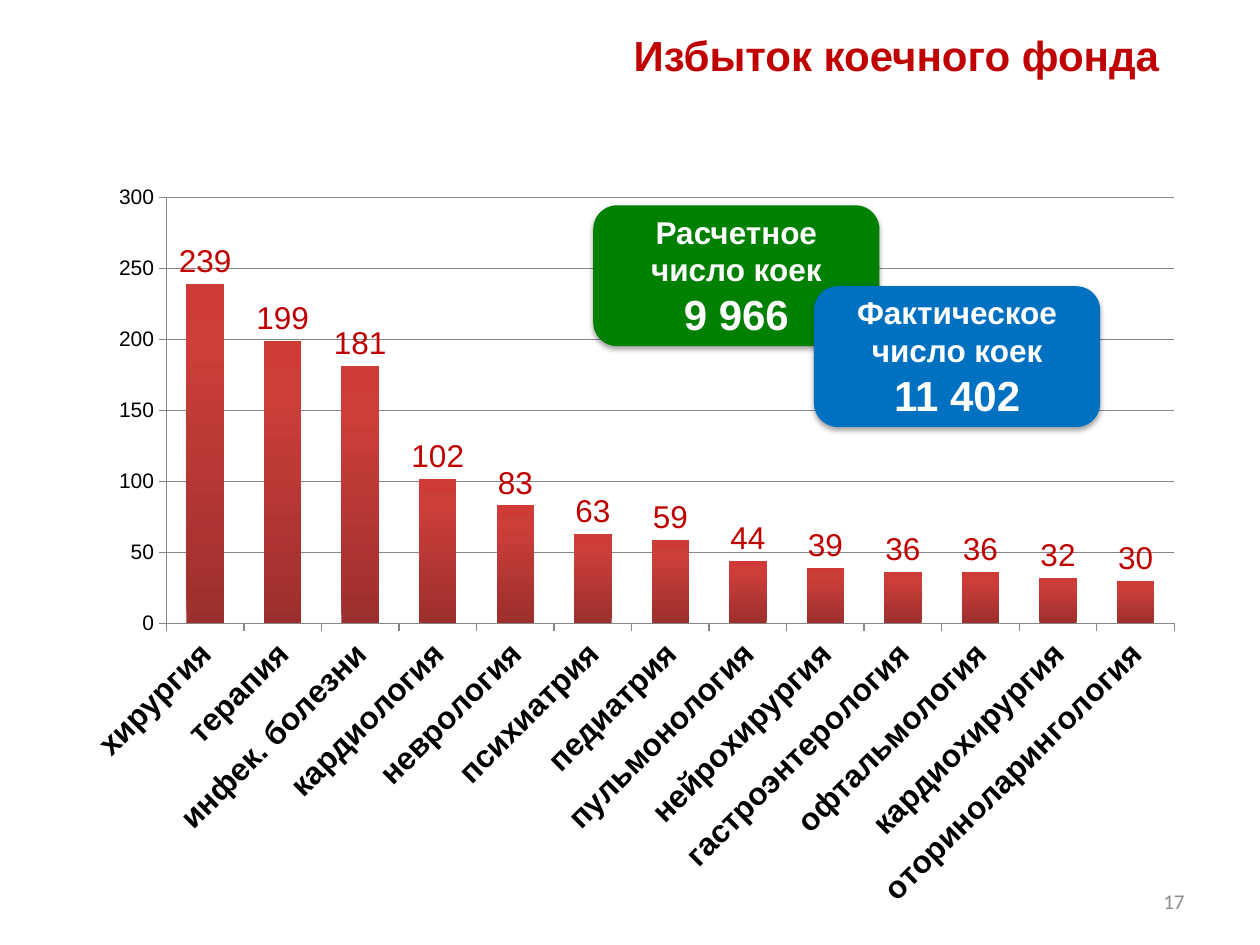
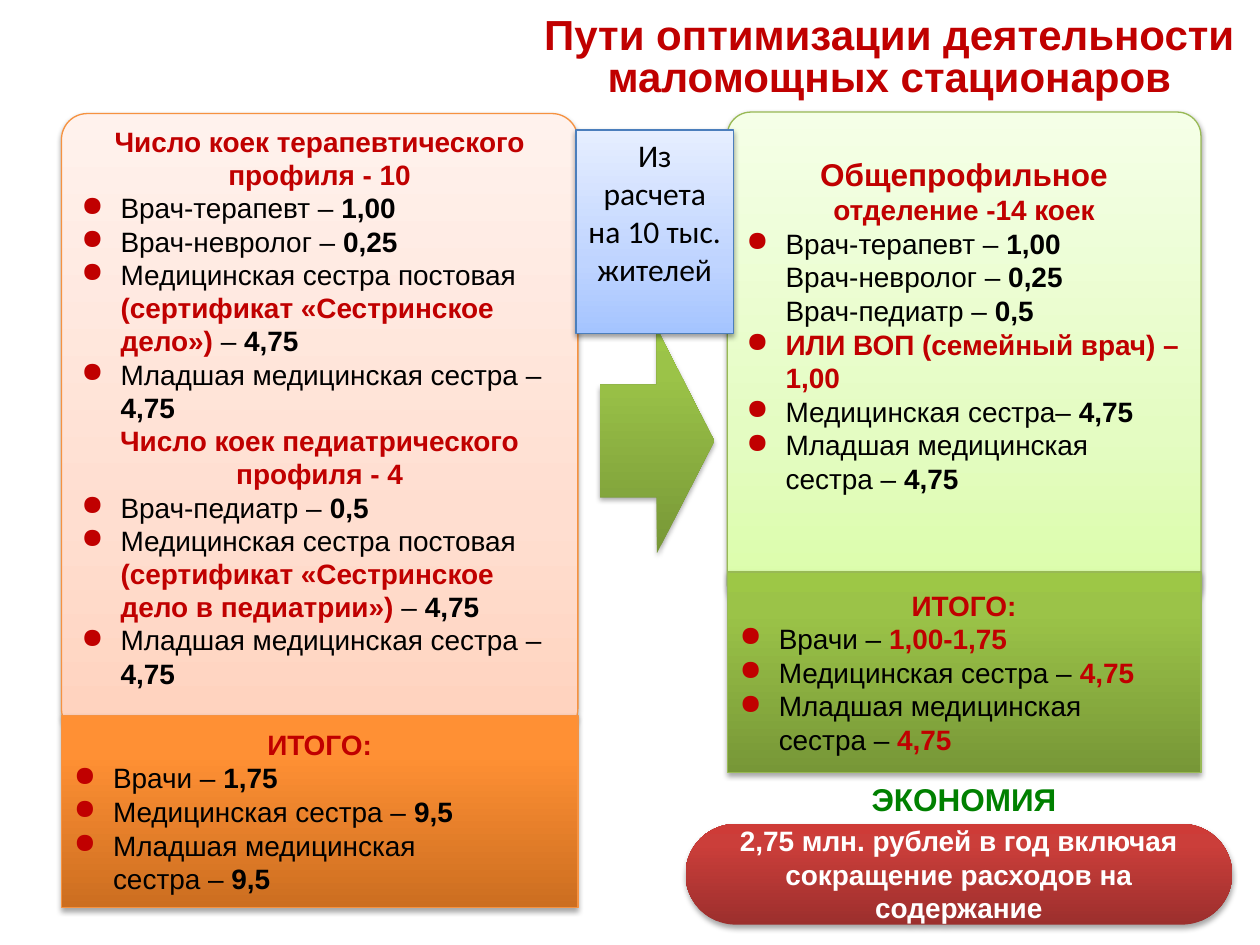
from lxml.etree import SubElement as Sub
from pptx import Presentation
from pptx.chart.data import CategoryChartData as Data
from pptx.dml.color import RGBColor as RGB
from pptx.enum.chart import XL_CHART_TYPE as Kind, XL_LABEL_POSITION as Spot, XL_TICK_MARK as Tick
from pptx.enum.shapes import MSO_SHAPE as Form
from pptx.enum.text import MSO_ANCHOR as Anchor, PP_ALIGN as Align
from pptx.oxml import parse_xml
from pptx.oxml.ns import nsdecls, qn
from pptx.util import Cm, Pt

RED, GREEN, BLUE, GREY = "C00000", "008000", "0070C0", "868686"
BRICK = ("9C2F2D", "CB3E3A", "CE3B37", 80)
LEAF = ("779737", "9BC348", "9DC746", 80)
AMBER = ("CC6E20", "FF9034", "FF9136", 80)
PEACH = ("FFD2BD", "FFDED0", "FFF2ED", 35)
LIME = ("DAFDA7", "E4FCC2", "F5FFE7", 35)
SKY = ("A4C4FF", "BFD4FF", "E6EEFF", 35)

# style: size, colour, bold, face
STYLES = {
    "title": (24, RED, True, "Arial"),
    "head": (18, RED, True, "Arial"),
    "red": (16, RED, True, "Arial"),
    "text": (16, "000000", False, "Arial"),
    "bold": (16, "000000", True, "Arial"),
    "white": (16, "FFFFFF", True, "Arial"),
    "label": (18, "FFFFFF", True, "Arial"),
    "total": (24, "FFFFFF", True, "Arial"),
    "green": (18, GREEN, True, "Arial"),
    "note": (18, "000000", False, "Calibri"),
    "page": (12, "8C8C8C", False, "Calibri"),
}


def paint(fill, tone, node=None):
    """Fill with one hex colour, or with three and the middle stop's percent."""
    if isinstance(tone, str):
        fill.solid()
        fill.fore_color.rgb = RGB.from_string(tone)
        return
    fill.gradient()
    fill.gradient_angle = 90
    stops = node.find(".//" + qn("a:gsLst"))
    for stop in list(stops):
        stops.remove(stop)
    for shade, pos in zip(tone, (0, tone[3], 100)):
        stop = Sub(stops, qn("a:gs"), pos=str(pos * 1000))
        Sub(stop, qn("a:srgbClr"), val=shade)


def write(frame, paras, pitch=None):
    """Write (kind, run, ...) paragraphs; kind is mid, right, dot or tab."""
    frame.word_wrap = True
    for i, (kind, *runs) in enumerate(paras):
        para = frame.add_paragraph() if i else frame.paragraphs[0]
        para.alignment = {"mid": Align.CENTER, "right": Align.RIGHT}.get(kind, Align.LEFT)
        if pitch:
            para.line_spacing = Pt(pitch)
        props = para._p.get_or_add_pPr()
        if kind in ("dot", "tab"):
            props.set("marL", str(Cm(0.79)))
        if kind == "dot":
            props.set("indent", str(-Cm(0.79)))
            Sub(Sub(props, qn("a:buClr")), qn("a:srgbClr"), val=RED)
            Sub(props, qn("a:buChar"), char="●")
        for style, text in runs:
            size, tone, bold, face = STYLES[style]
            for j, part in enumerate(text.split("\n")):
                if j:
                    para.add_line_break()
                    Sub(para._p[-1], qn("a:rPr"), sz=str(size * 100))
                if part:
                    run = para.add_run()
                    run.text = part
                    font = run.font
                    font.size, font.bold, font.name = Pt(size), bold, face
                    paint(font.fill, tone)


deck = Presentation()
deck.slide_width, deck.slide_height = Cm(25.4), Cm(19.05)

# Titles
slides = []
for text, left in (
    ("Избыток коечного фонда", 10.74),
    ("Пути оптимизации деятельности маломощных стационаров", 10.46),
):
    slide = deck.slides.add_slide(deck.slide_layouts[5])
    title = slide.shapes.title
    title.left, title.top = Cm(left), Cm(0)
    title.width, title.height = Cm(25.4 - left), Cm(2.39)
    write(title.text_frame, [("mid", ("title", text))], 24)
    slides.append(slide)
excess, ways = slides

# Chart of surplus beds
beds = {
    "хирургия": 239, "терапия": 199, "инфек. болезни": 181, "кардиология": 102,
    "неврология": 83, "психиатрия": 63, "педиатрия": 59, "пульмонология": 44,
    "нейрохирургия": 39, "гастроэнтерология": 36, "офтальмология": 36,
    "кардиохирургия": 32, "оториноларингология": 30,
}
data = Data()
data.categories = list(beds)
data.add_series("Series 1", list(beds.values()))
chart = excess.shapes.add_chart(
    Kind.COLUMN_CLUSTERED, Cm(1.3), Cm(3.53), Cm(22.83), Cm(15.06), data).chart
chart.has_legend = chart.has_title = False
chart.font.size, chart.font.name = Pt(18), "Arial"
paint(chart.font.fill, "000000")

plot = chart.plots[0]
plot.gap_width, plot.vary_by_categories = 107, False
paint(plot.series[0].format.fill, BRICK, plot.series[0]._element)
plot.has_data_labels = True
labels = plot.data_labels
labels.show_value, labels.position = True, Spot.OUTSIDE_END
labels.font.size, labels.font.name = Pt(18), "Arial"
paint(labels.font.fill, RED)

cats, vals = chart.category_axis, chart.value_axis
vals.minimum_scale, vals.maximum_scale, vals.major_unit = 0, 300, 50
vals.has_major_gridlines = True
for axis, size, bold in ((cats, 18, True), (vals, 12, False)):
    axis.major_tick_mark = Tick.OUTSIDE
    font = axis.tick_labels.font
    font.size, font.bold, font.name = Pt(size), bold, "Arial"
    paint(font.fill, "000000")
for line in (cats.format.line, vals.format.line, vals.major_gridlines.format.line):
    paint(line.fill, GREY)
    line.width = Pt(0.75)
cats._element.find(".//" + qn("a:bodyPr")).set("rot", "-2700000")

area = chart.element.find(".//" + qn("c:plotArea"))
for old in area.findall(qn("c:layout")):
    area.remove(old)
layout = area.makeelement(qn("c:layout"))
area.insert(0, layout)
inner = Sub(layout, qn("c:manualLayout"))
for tag, val in (
    ("layoutTarget", "inner"), ("xMode", "edge"), ("yMode", "edge"),
    ("x", "0.09"), ("y", "0.03"), ("w", "0.89"), ("h", "0.57"),
):
    Sub(inner, qn("c:" + tag), val=val)

# Texts of the staff cards
therapist = ("dot", ("text", "Врач-терапевт – "), ("bold", "1,00"))
aide = ("dot", ("text", "Младшая медицинская сестра – "), ("bold", "4,75"))
before = [
    ("mid", ("red", "Число коек терапевтического профиля - 10")),
    therapist,
    ("dot", ("text", "Врач-невролог – "), ("bold", "0,25")),
    ("dot", ("text", "Медицинская сестра постовая "),
     ("red", "(сертификат «Сестринское дело») "), ("text", "– "), ("bold", "4,75")),
    aide,
    ("mid", ("red", "Число коек педиатрического профиля - 4")),
    ("dot", ("text", "Врач-педиатр – "), ("bold", "0,5")),
    ("dot", ("text", "Медицинская сестра постовая "),
     ("red", "(сертификат «Сестринское дело в педиатрии») "), ("text", "– "), ("bold", "4,75")),
    aide,
]
after = [
    ("mid", ("head", "Общепрофильное "), ("red", "отделение -14 коек")),
    therapist,
    ("tab", ("text", "Врач-невролог – "), ("bold", "0,25")),
    ("tab", ("text", "Врач-педиатр – "), ("bold", "0,5")),
    ("dot", ("red", "ИЛИ ВОП (семейный врач) – 1,00")),
    ("dot", ("text", "Медицинская сестра– "), ("bold", "4,75")),
    aide,
]
sums = []
for style, doctors, nurses in (("bold", "1,75", "9,5"), ("red", "1,00-1,75", "4,75")):
    sums.append([
        ("mid", ("red", "ИТОГО:")),
        ("dot", ("text", "Врачи – "), (style, doctors)),
        ("dot", ("text", "Медицинская сестра – "), (style, nurses)),
        ("dot", ("text", "Младшая медицинская\nсестра – "), (style, nurses)),
    ])
plan = [("mid", ("label", "Расчетное число коек\n"), ("total", "9 966"))]
fact = [("mid", ("label", "Фактическое число коек\n"), ("total", "11 402"))]
saving = [("mid", ("white", "2,75 млн. рублей в год включая сокращение расходов на содержание"))]
basis = [("mid", ("note", "Из расчета на 10 тыс. жителей"))]

# slide, form, place, rounding, fill, line, text, pitch, space below
ROUND = Form.ROUNDED_RECTANGLE
cards = [
    (excess, ROUND, (11.96, 4.14, 5.77, 2.84), 0.17, GREEN, None, plan, None, 0.13),
    (excess, ROUND, (16.41, 5.77, 5.77, 2.84), 0.17, BLUE, None, fact, None, 0.13),
    (ways, ROUND, (1.24, 2.29, 10.41, 12.52), 0.05, PEACH, "F69240", before, 19, 0.8),
    (ways, ROUND, (14.66, 2.26, 9.55, 9.96), 0.05, LIME, "98B955", after, None, 1.5),
    (ways, ROUND, (1.24, 14.43, 10.41, 3.86), 0, AMBER, "F69240", sums[0], None, 0.13),
    (ways, ROUND, (14.66, 11.53, 9.55, 4.04), 0, LEAF, "98B955", sums[1], None, 0.13),
    (ways, Form.RIGHT_ARROW, (12.09, 6.63, 2.31, 4.52), None, LEAF, None, [], None, 0.13),
    (ways, ROUND, (13.82, 16.61, 11.02, 2.03), 0.5, BRICK, None, saving, None, 0.13),
    (ways, Form.RECTANGLE, (11.61, 2.62, 3.18, 4.11), None, SKY, "4B7EBC", basis, None, 0.13),
]
for slide, form, place, bend, tone, edge, paras, pitch, below in cards:
    card = slide.shapes.add_shape(form, *map(Cm, place))
    if bend is not None:
        card.adjustments[0] = bend
    paint(card.fill, tone, card.element)
    if edge:
        paint(card.line.fill, edge)
        card.line.width = Pt(0.75)
    else:
        card.line.fill.background()
    dist, alpha = (1.6, 38) if tone[-1] == 35 else (1.8, 35)
    card.element.spPr.append(parse_xml(
        f'<a:effectLst {nsdecls("a")}><a:outerShdw blurRad="{Pt(3.1)}" dist="{Pt(dist)}" '
        f'dir="5400000" rotWithShape="0"><a:srgbClr val="000000">'
        f'<a:alpha val="{alpha * 1000}"/></a:srgbClr></a:outerShdw></a:effectLst>'))
    frame = card.text_frame
    frame.vertical_anchor = Anchor.TOP if form == Form.RECTANGLE else Anchor.MIDDLE
    frame.margin_bottom = Cm(below)
    write(frame, paras, pitch)

# Page number and caption over the saving
for slide, place, para, anchor in (
    (excess, (18.21, 17.65, 5.92, 1.02), ("right", ("page", "17")), Anchor.MIDDLE),
    (ways, (14.66, 15.6, 9.55, 1.02), ("mid", ("green", "ЭКОНОМИЯ")), Anchor.TOP),
):
    frame = slide.shapes.add_textbox(*map(Cm, place)).text_frame
    frame.vertical_anchor = anchor
    write(frame, [para])

deck.save("out.pptx")
